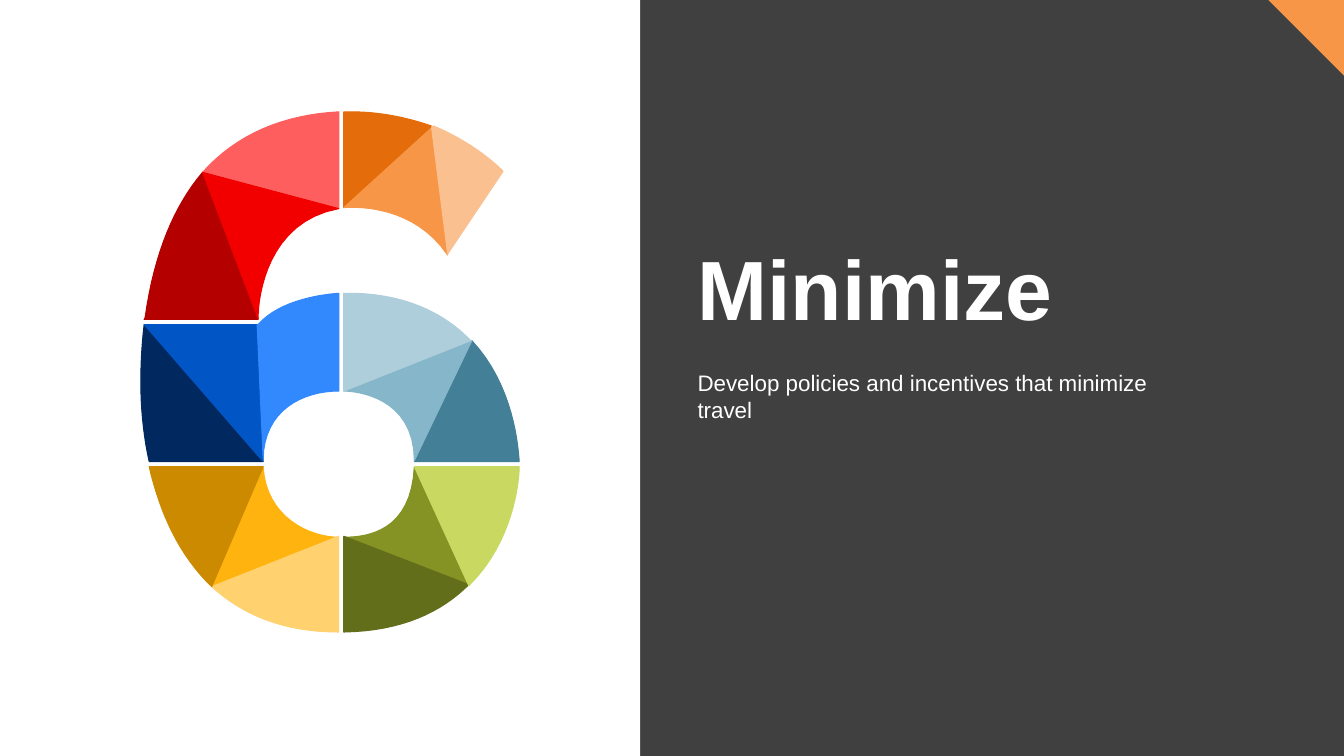
import dataclasses

import pptx
import pptx.dml.color
import pptx.enum.shapes
import pptx.enum.text
import pptx.util

PX = 9144  # EMU per px, 100 px to the inch
CURVE_STEPS = 16


@dataclasses.dataclass(frozen=True)
class Theme:
    backdrop: str = "404040"
    panel: str = "FFFFFF"
    corner: str = "F79646"
    text: str = "FFFFFF"
    font: str = "Arial"
    title_size: int = 60
    body_size: int = 16
    facet_line: float = 0.75


THEME = Theme()

# Colour, then the outline: (x, y) is a straight step, six numbers are a Bézier step.
SIX_FACETS = [
    # red, upper left
    ("FF5E5E", [(198, 97), (198, 1), (143, 4, 97, 23, 63, 61)]),
    ("B50000", [(118, 206), (63, 61), (35, 94, 15, 141, 6, 205), (5, 207), (118, 207)]),
    ("F20000", [(118, 206), (118, 184, 127, 110, 198, 97), (63, 61)]),
    # blue, middle left
    ("01295F", [(123, 348), (5, 212), (0, 256, 0, 303, 10, 348)]),
    ("0255C5", [(123, 348), (123, 345), (117, 212), (5, 212)]),
    ("3288FD", [(198, 278), (198, 181), (184, 182, 140, 187, 118, 212), (117, 212),
                (123, 345), (124, 297, 162, 278, 198, 278)]),
    # orange, upper right
    ("E46C0A", [(290, 15), (267, 7, 237, 0, 203, 1), (203, 96), (290, 16)]),
    ("F79646", [(306, 143), (291, 16), (203, 96), (217, 95, 273, 94, 306, 143)]),
    ("FAC090", [(306, 142), (361, 60), (361, 60, 337, 34, 292, 15), (290, 16)]),
    # yellow, lower left
    ("FFB30F", [(123, 353), (72, 472), (198, 423), (170, 423, 126, 404, 123, 353)]),
    ("FFD16F", [(198, 517), (198, 422), (72, 472), (103, 500, 143, 517, 198, 517)]),
    ("CB8A00", [(123, 353), (10, 353), (21, 400, 40, 441, 72, 472)]),
    # green, lower right
    ("849324", [(273, 353), (270, 417, 227, 423, 203, 423), (327, 471)]),
    ("636E1B", [(203, 422), (203, 517), (261, 516, 300, 497, 327, 470)]),
    ("C8D861", [(377, 353), (273, 353), (327, 471), (371, 428, 377, 368, 377, 353)]),
    # teal, middle right
    ("437F97", [(377, 348), (376, 334, 372, 273, 330, 228), (273, 347), (273, 348)]),
    ("86B6C9", [(329, 228), (203, 278), (214, 278, 273, 283, 273, 347), (330, 228)]),
    ("AECEDB", [(203, 181), (203, 278), (329, 228), (303, 201, 263, 180, 203, 181)]),
]


def rgb(color):
    return pptx.dml.color.RGBColor.from_string(color)


def paint(shape, color, line_width=None):
    shape.shadow.inherit = False
    shape.fill.solid()
    shape.fill.fore_color.rgb = rgb(color)
    if line_width is None:
        shape.line.fill.background()
    else:
        shape.line.color.rgb = rgb(color)
        shape.line.width = pptx.util.Pt(line_width)


def trace(outline):
    """Turn straight and Bézier steps into a list of points."""
    points = [outline[0]]
    for step in outline[1:]:
        if len(step) == 2:
            points.append(step)
            continue
        controls = [points[-1], step[:2], step[2:4], step[4:]]
        for i in range(1, CURVE_STEPS + 1):
            t = i / CURVE_STEPS
            weights = ((1 - t) ** 3, 3 * t * (1 - t) ** 2, 3 * t * t * (1 - t), t ** 3)
            points.append(tuple(
                sum(weight * control[axis] for weight, control in zip(weights, controls))
                for axis in (0, 1)))
    return points


def add_outline(shapes, left, top, outline, color, line_width=None):
    points = [((left + x) * PX, (top + y) * PX) for x, y in trace(outline)]
    builder = shapes.build_freeform(*points[0], scale=1.0)
    builder.add_line_segments(points[1:], close=True)
    paint(builder.convert_to_shape(), color, line_width)


def add_text(slide, box, text, *, size, bold=False, color=THEME.text, spacing=None,
             anchor=pptx.enum.text.MSO_ANCHOR.TOP,
             auto_size=pptx.enum.text.MSO_AUTO_SIZE.NONE):
    frame = slide.shapes.add_textbox(*(length * PX for length in box)).text_frame
    frame.word_wrap = True
    frame.auto_size = auto_size
    frame.vertical_anchor = anchor
    paragraph = frame.paragraphs[0]
    paragraph.line_spacing = spacing
    run = paragraph.add_run()
    run.text = text
    run.font.name = THEME.font
    run.font.size = pptx.util.Pt(size)
    run.font.bold = bold
    run.font.color.rgb = rgb(color)


def add_corner(slide, box):
    left, top, width, height = box
    add_outline(slide.shapes, left, top, [(0, 0), (width, 0), (width, height)], THEME.corner)


def add_numeral_panel(slide, box):
    """White panel that carries the faceted figure six."""
    left, top, width, height = box
    panel = slide.shapes.add_shape(pptx.enum.shapes.MSO_SHAPE.RECTANGLE,
                                   *(length * PX for length in box))
    paint(panel, THEME.panel)
    six = slide.shapes.add_group_shape()
    for color, outline in SIX_FACETS:
        add_outline(six.shapes, left + 138, top + 110, outline, color, THEME.facet_line)


def add_message(slide, box):
    """Title above the middle of the box, explanation below it."""
    left, top, width, height = box
    add_text(slide, (left, top, width, 218), "Minimize", size=THEME.title_size, bold=True,
             spacing=0.8, anchor=pptx.enum.text.MSO_ANCHOR.BOTTOM)
    add_text(slide, (left, top + height - 64, 480, 64),
             "Develop policies and incentives that minimize travel", size=THEME.body_size,
             auto_size=pptx.enum.text.MSO_AUTO_SIZE.SHAPE_TO_FIT_TEXT)


def build_section_slide(deck, width, height):
    slide = deck.slides.add_slide(deck.slide_layouts[6])
    slide.background.fill.solid()
    slide.background.fill.fore_color.rgb = rgb(THEME.backdrop)
    add_corner(slide, (width - 75, 0, 75, 75))
    add_numeral_panel(slide, (0, 0, 635, height))
    add_message(slide, (682, 121, 583, 304))


def main():
    width, height = 1333, 750
    deck = pptx.Presentation()
    deck.slide_width = width * PX
    deck.slide_height = height * PX
    build_section_slide(deck, width, height)
    deck.save("out.pptx")


if __name__ == "__main__":
    main()
